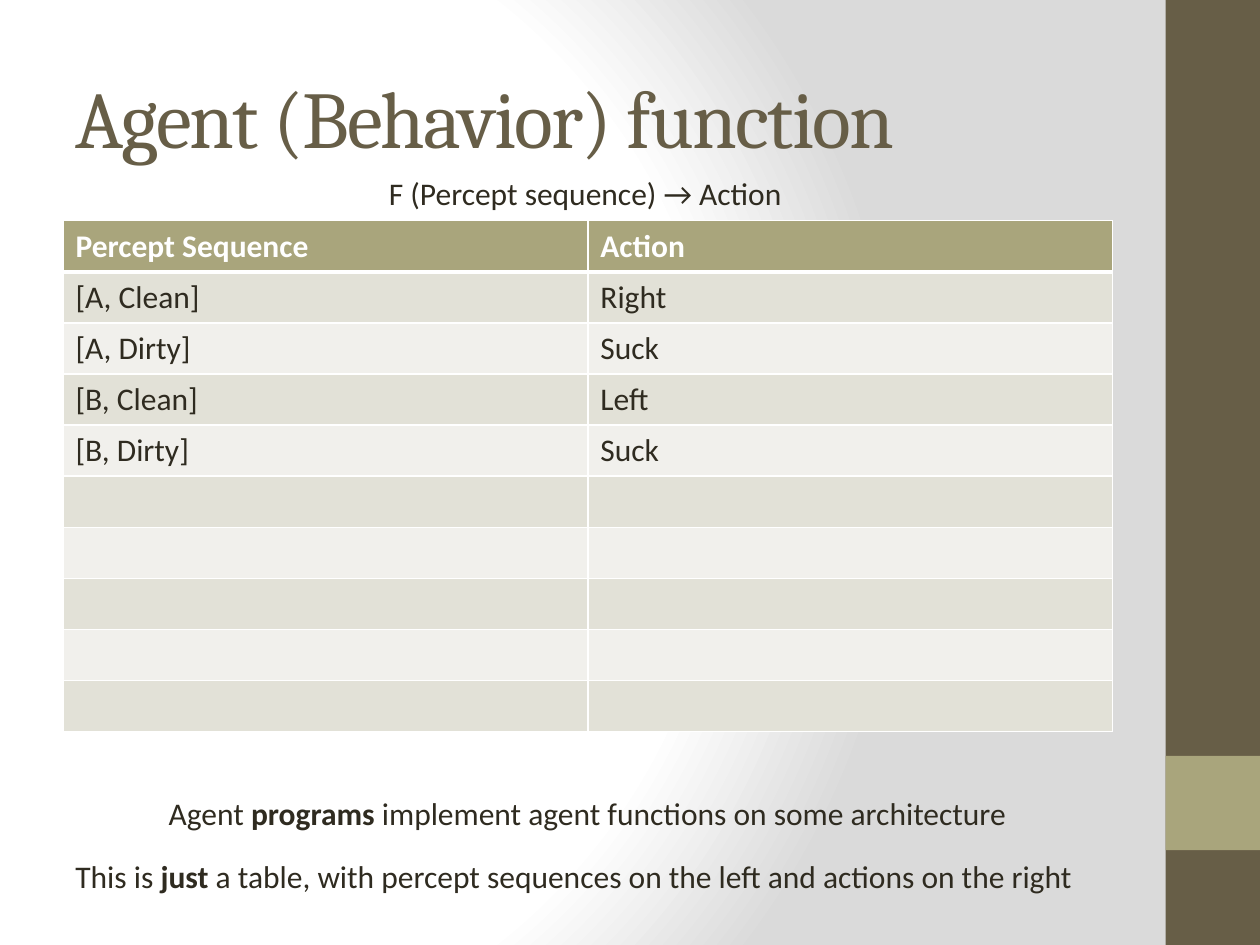
"""Builds the agent function slide with its percept table."""
from pptx import Presentation as Deck
from pptx.dml.color import RGBColor as Rgb
from pptx.enum.shapes import MSO_SHAPE as Shape
from pptx.enum.text import MSO_ANCHOR as Anchor, MSO_AUTO_SIZE as Fit
from pptx.oxml import parse_xml as to_xml
from pptx.oxml.ns import nsdecls, qn
from pptx.util import Cm, Pt

THEME = {
    "dark": "675E47", "olive": "A9A57C", "ink": "2F2B20", "white": "FFFFFF",
    "bands": ("E2E1D7", "F1F0EC"),
    "stops": ((0, "FFFFFF"), (75, "FFFFFF"), (100, "DADADA")),
    "head": "Cambria", "body": "Calibri", "big": 46, "small": 18,
    "thin": 1, "thick": 3,
}

PLAIN = {"name": THEME["body"], "size": Pt(THEME["small"]), "bold": False}
BOLD = {**PLAIN, "bold": True}
TITLE = {"name": THEME["head"], "size": Pt(THEME["big"]), "bold": False}

BARS = [
    ((23.5, 0, 1.9, 19.05), "dark"),
    ((23.5, 15.24, 1.9, 1.9), "olive"),
]
HEAD = ((1.27, 0.76, 21.16, 3.18), "Agent (Behavior) function")
NOTES = [
    ((7.59, 3.38, 8.69, 1.02), [("F (Percept sequence) → Action", PLAIN)]),
    ((3.15, 15.88, 17.55, 1.02), [
        ("Agent ", PLAIN), ("programs", BOLD),
        (" implement agent functions on some architecture", PLAIN)]),
    ((1.27, 17.15, 20.96, 1.02), [
        ("This is ", PLAIN), ("just", BOLD),
        (" a table, with percept sequences on the left"
         " and actions on the right", PLAIN)]),
]
ROWS = [
    ("Percept Sequence", "Action"),
    ("[A, Clean]", "Right"),
    ("[A, Dirty]", "Suck"),
    ("[B, Clean]", "Left"),
    ("[B, Dirty]", "Suck"),
] + [("", "")] * 5
GRID = (1.27, 4.45, 21.16, 10.3)


def place(box):
    """Turns a box in centimetres into lengths."""
    return [Cm(v) for v in box]


def paint(fill, color):
    """Gives a fill one solid colour."""
    fill.solid()
    fill.fore_color.rgb = Rgb.from_string(color)


def style(font, form, color):
    """Sets font values and colour."""
    for key, val in form.items():
        setattr(font, key, val)
    font.color.rgb = Rgb.from_string(color)


def write(para, text, form, color):
    """Adds one styled run."""
    run = para.add_run()
    run.text = text
    style(run.font, form, color)
    return run


def shade(slide):
    """Gives the slide its round gradient."""
    slide.background.fill.solid()
    prop = slide.element.find(".//" + qn("p:bgPr"))
    stops = "".join(
        f'<a:gs pos="{pos * 1000}"><a:srgbClr val="{color}"/></a:gs>'
        for pos, color in THEME["stops"])
    prop.replace(prop[0], to_xml(
        f'<a:gradFill {nsdecls("a")} rotWithShape="1"><a:gsLst>{stops}</a:gsLst>'
        '<a:path path="circle"><a:fillToRect l="20000" t="50000" r="100000"'
        ' b="50000"/></a:path></a:gradFill>'))


def edge(cell, sides):
    """Draws white lines on the sides of a cell."""
    prop = cell._tc.get_or_add_tcPr()
    for at, (side, width) in enumerate(sides.items()):
        prop.insert(at, to_xml(
            f'<a:ln{side} {nsdecls("a")} w="{Pt(width)}"><a:solidFill>'
            f'<a:srgbClr val="{THEME["white"]}"/></a:solidFill></a:ln{side}>'))


def add_bar(slide, box, color):
    """Adds a plain side bar."""
    bar = slide.shapes.add_shape(Shape.RECTANGLE, *place(box))
    bar.shadow.inherit = False
    paint(bar.fill, THEME[color])
    bar.line.fill.background()


def add_title(slide, box, text):
    """Adds the slide title."""
    frame = slide.shapes.add_textbox(*place(box)).text_frame
    for key, val in {"word_wrap": True, "vertical_anchor": Anchor.MIDDLE}.items():
        setattr(frame, key, val)
    run = write(frame.paragraphs[0], text, TITLE, THEME["dark"])
    run.font._element.set("spc", "-100")


def add_note(slide, box, runs):
    """Adds a one line note."""
    frame = slide.shapes.add_textbox(*place(box)).text_frame
    for key, val in {"word_wrap": False, "auto_size": Fit.SHAPE_TO_FIT_TEXT}.items():
        setattr(frame, key, val)
    for text, form in runs:
        write(frame.paragraphs[0], text, form, THEME["ink"])


def add_grid(slide):
    """Adds the percept table."""
    grid = slide.shapes.add_table(len(ROWS), len(ROWS[0]), *place(GRID)).table
    thin, thick = THEME["thin"], THEME["thick"]
    for r, row in enumerate(ROWS):
        fill = THEME["bands"][(r - 1) % 2] if r else THEME["olive"]
        form, color = (PLAIN, THEME["ink"]) if r else (BOLD, THEME["white"])
        sides = {"L": thin, "R": thin, "T": thick if r == 1 else thin,
                 "B": thin if r else thick}
        for c, text in enumerate(row):
            cell = grid.cell(r, c)
            paint(cell.fill, fill)
            edge(cell, sides)
            if text:
                write(cell.text_frame.paragraphs[0], text, form, color)


def main():
    """Builds and saves the slide."""
    deck = Deck()
    deck.slide_width, deck.slide_height = Cm(25.4), Cm(19.05)
    slide = deck.slides.add_slide(deck.slide_layouts[6])
    shade(slide)
    for box, color in BARS:
        add_bar(slide, box, color)
    add_title(slide, *HEAD)
    add_grid(slide)
    for box, runs in NOTES:
        add_note(slide, box, runs)
    deck.save("out.pptx")


if __name__ == "__main__":
    main()
